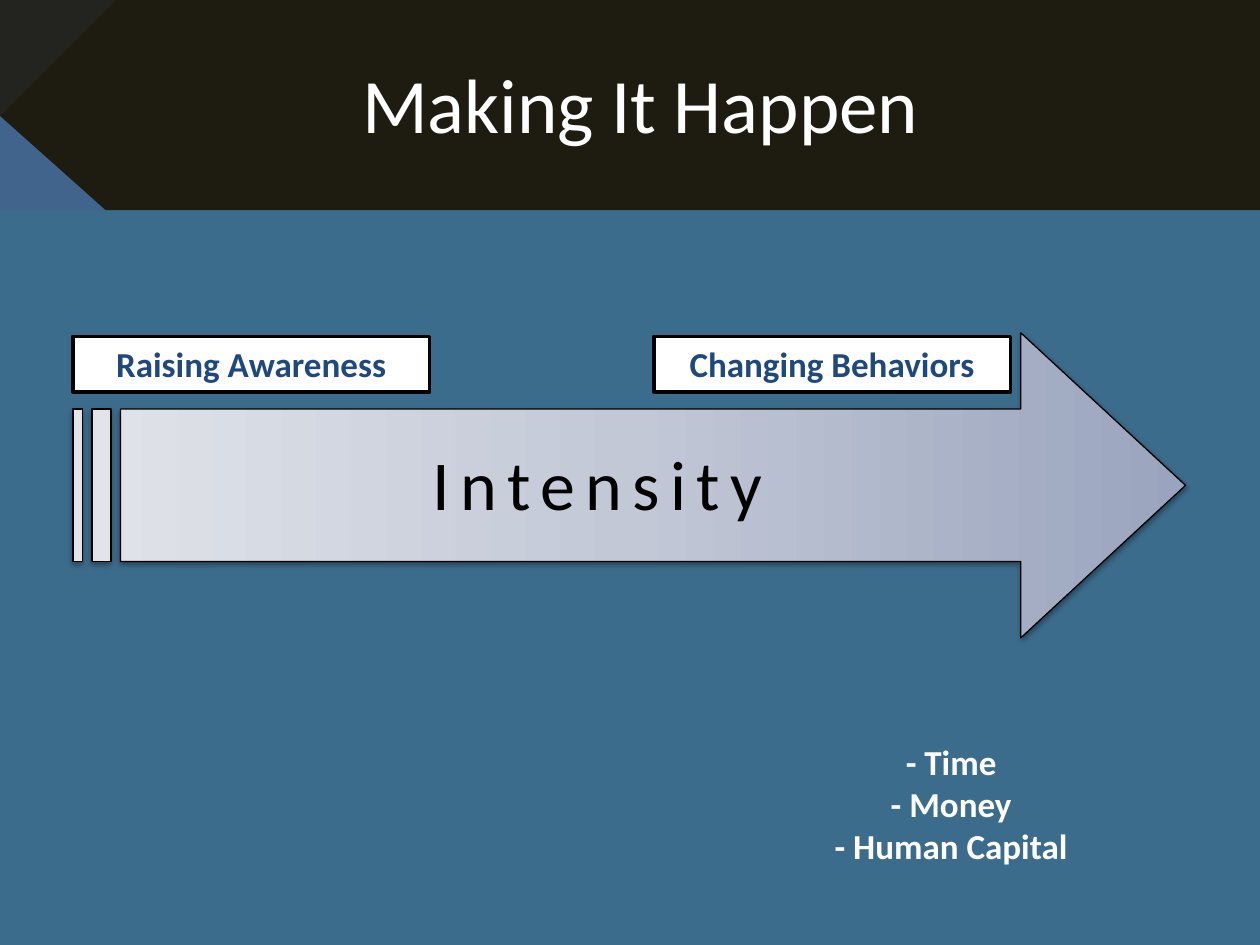
from lxml import etree
from pptx import Presentation
from pptx.dml.color import RGBColor
from pptx.enum.shapes import MSO_SHAPE
from pptx.enum.text import MSO_ANCHOR, MSO_AUTO_SIZE, PP_ALIGN
from pptx.oxml import parse_xml
from pptx.oxml.ns import nsdecls, qn
from pptx.util import Cm, Pt

BACKGROUND = RGBColor(0x3C, 0x6C, 0x8C)
BAND = RGBColor(0x1E, 0x1C, 0x11)
BLUE = RGBColor(0x4F, 0x81, 0xBD)
CHARCOAL = RGBColor(0x26, 0x26, 0x26)
NAVY = RGBColor(0x1F, 0x49, 0x7D)
BLACK = RGBColor(0, 0, 0)
WHITE = RGBColor(0xFF, 0xFF, 0xFF)
ARROW_STOPS = [
    (0, RGBColor(0x9A, 0xA4, 0xBE)),
    (50, RGBColor(0xC2, 0xC8, 0xD6)),
    (100, RGBColor(0xE2, 0xE4, 0xEA)),
]

presentation = Presentation()
presentation.slide_width = Cm(25.4)
presentation.slide_height = Cm(19.05)
slide = presentation.slides.add_slide(presentation.slide_layouts[6])
slide.background.fill.solid()
slide.background.fill.fore_color.rgb = BACKGROUND


def add_filled_shape(kind, box, color, line_width=None):
    shape = slide.shapes.add_shape(kind, *[Cm(length) for length in box])
    shape.shadow.inherit = False
    shape.fill.solid()
    shape.fill.fore_color.rgb = color
    if line_width:
        shape.line.color.rgb = BLACK
        shape.line.width = Pt(line_width)
    else:
        shape.line.fill.background()
    return shape


def write_lines(shape, lines, anchor=MSO_ANCHOR.TOP, wrap=True, **font_format):
    """Fill a shape with centred paragraphs that share one font format."""
    frame = shape.text_frame
    frame.word_wrap = wrap
    frame.auto_size = MSO_AUTO_SIZE.NONE
    frame.vertical_anchor = anchor
    frame.text = "\n".join(lines)
    for paragraph in frame.paragraphs:
        paragraph.alignment = PP_ALIGN.CENTER
        font = paragraph.runs[0].font
        font.name = "Calibri"
        font.color.rgb = font_format["color"]
        for name in ("size", "bold"):
            setattr(font, name, font_format.get(name))


# Header band with two translucent corner triangles
add_filled_shape(MSO_SHAPE.RECTANGLE, (0, 0, 25.4, 4.24), BAND)
for box, color, rotation in [
    ((0, 2.34, 2.13, 1.9), BLUE, 0),
    ((0, 0, 2.34, 2.34), CHARCOAL, 90),
]:
    triangle = add_filled_shape(MSO_SHAPE.RIGHT_TRIANGLE, box, color)
    triangle.rotation = rotation
    color_element = triangle.fill._xPr.find(qn("a:solidFill"))[0]
    etree.SubElement(color_element, qn("a:alpha"), val="72000")

title = slide.shapes.add_textbox(Cm(1.7), Cm(0.2), Cm(22.43), Cm(3.73))
write_lines(title, ["Making It Happen"], MSO_ANCHOR.MIDDLE, size=Pt(44), color=WHITE)

# Intensity arrow with a three-stop gradient and a soft shadow
arrow = add_filled_shape(
    MSO_SHAPE.STRIPED_RIGHT_ARROW, (1.47, 6.71, 22.43, 6.15), WHITE, 0.75
)
arrow.adjustments[0] = 0.5
arrow.adjustments[1] = 0.54
stops = "".join(
    f'<a:gs pos="{position * 1000}"><a:srgbClr val="{color}"/></a:gs>'
    for position, color in ARROW_STOPS
)
gradient = parse_xml(
    f'<a:gradFill {nsdecls("a")} rotWithShape="1"><a:gsLst>{stops}</a:gsLst>'
    '<a:lin ang="10800000" scaled="0"/></a:gradFill>'
)
properties = arrow._element.spPr
properties.replace(properties.find(qn("a:solidFill")), gradient)
properties.find(qn("a:effectLst")).append(parse_xml(
    f'<a:outerShdw {nsdecls("a")} blurRad="{Pt(3.1)}" dist="{Pt(1.6)}" dir="5400000" '
    'rotWithShape="0"><a:srgbClr val="000000"><a:alpha val="38000"/></a:srgbClr>'
    '</a:outerShdw>'
))

# Labels above the arrow
for left, label in [(13.18, "Changing Behaviors"), (1.47, "Raising Awareness")]:
    label_box = add_filled_shape(
        MSO_SHAPE.RECTANGLE, (left, 6.78, 7.19, 1.12), WHITE, 2
    )
    write_lines(label_box, [label], size=Pt(20), bold=True, color=NAVY)

intensity = slide.shapes.add_textbox(Cm(8.33), Cm(8.76), Cm(7.44), Cm(1.96))
write_lines(intensity, ["Intensity"], wrap=False, size=Pt(40), color=BLACK)
intensity.text_frame.paragraphs[0].runs[0].font._element.set("spc", "600")

resources = slide.shapes.add_textbox(Cm(14.17), Cm(14.81), Cm(10.01), Cm(2.82))
write_lines(
    resources, ["- Time", "- Money", "- Human Capital"],
    size=Pt(20), bold=True, color=WHITE,
)

presentation.save("out.pptx")
